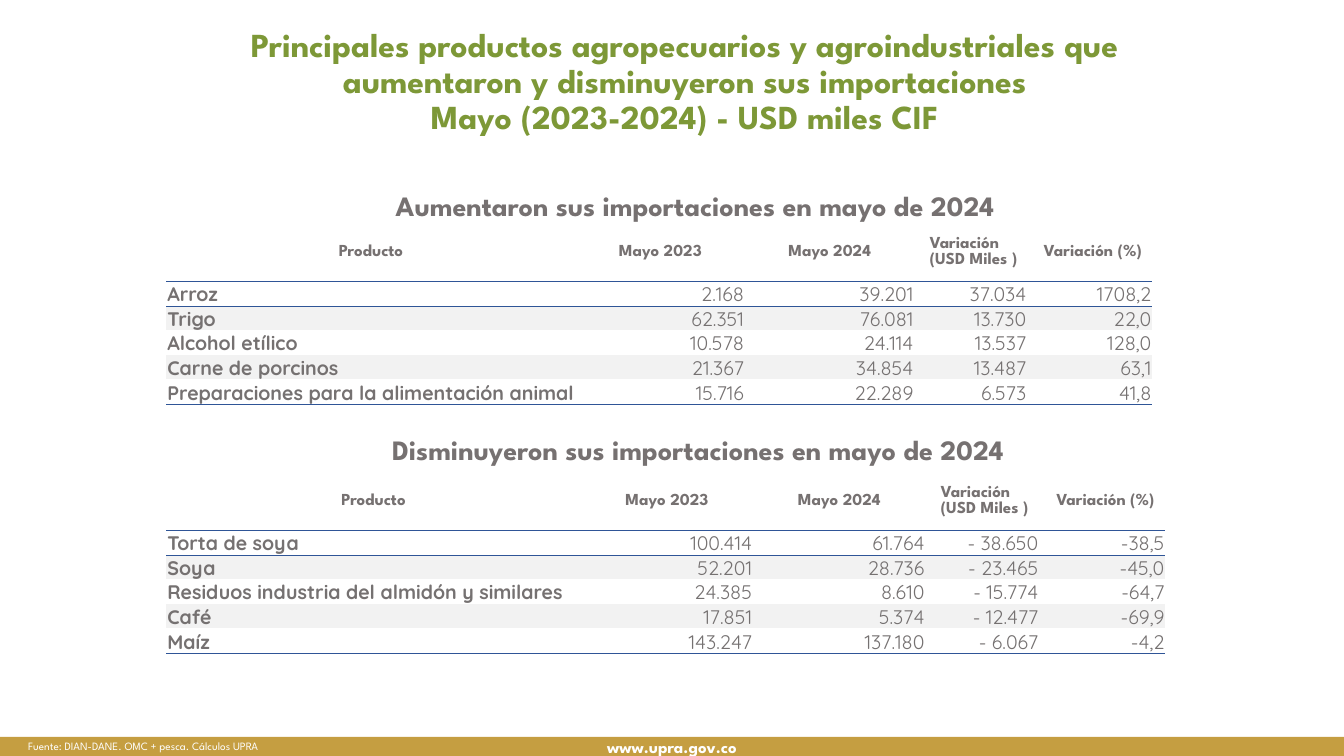
from lxml.etree import SubElement
from pptx import Presentation
from pptx.dml.color import RGBColor
from pptx.enum.shapes import MSO_SHAPE
from pptx.enum.text import MSO_ANCHOR, PP_ALIGN
from pptx.oxml.ns import qn
from pptx.util import Pt

PX = 9144  # 100 px to the inch
HEADING_FONT, BODY_FONT = "League Spartan", "Quicksand"
GREEN, GRAY, BODY_GRAY = "7D9837", "767171", "757171"
GOLD, BAND, RULE, WHITE = "C59E41", "F2F2F2", "2F5597", "FFFFFF"
NO_STYLE_NO_GRID = "{2D5ABB26-0587-4C30-8999-92F81FD0307C}"


def color(value):
    return RGBColor.from_string(value)


def write(frame, text, size, ink, align, bold=True, name=HEADING_FONT):
    """Fill a text frame with one paragraph in one font."""
    frame.word_wrap = True
    para = frame.paragraphs[0]
    para.text = text
    para.alignment = align
    para.font.size = Pt(size)
    para.font.name = name
    para.font.bold = bold
    para.font.color.rgb = color(ink)
    return para


deck = Presentation()
deck.slide_width, deck.slide_height = 1333 * PX, 750 * PX
page = deck.slides.add_slide(deck.slide_layouts[5])

title = page.shapes.title
title.left, title.top, title.width, title.height = 199 * PX, 23 * PX, 960 * PX, 107 * PX
title.text_frame.vertical_anchor = MSO_ANCHOR.TOP
heading = write(
    title.text_frame,
    "Principales productos agropecuarios y agroindustriales que "
    "aumentaron y disminuyeron sus importaciones\vMayo (2023-2024) - USD miles CIF",
    24, GREEN, PP_ALIGN.CENTER)
heading.line_spacing = 0.9

footer = page.shapes.add_shape(MSO_SHAPE.RECTANGLE, 0, 731 * PX, 1333 * PX, 19 * PX)
footer.shadow.inherit = False
footer.fill.solid()
footer.fill.fore_color.rgb = color(GOLD)
footer.line.fill.background()
footer.text_frame.vertical_anchor = MSO_ANCHOR.MIDDLE
write(footer.text_frame, "www.upra.gov.co", 12, WHITE, PP_ALIGN.CENTER)

# text, left, top, width, height, size, ink, alignment, bold
labels = [
    ("Fuente: DIAN-DANE. OMC + pesca. Cálculos UPRA",
     18, 729, 1291, 24, 8, WHITE, PP_ALIGN.JUSTIFY, False),
    ("Aumentaron sus importaciones en mayo de 2024",
     214, 182, 951, 44, 20, GRAY, PP_ALIGN.CENTER, True),
    ("Disminuyeron sus importaciones en mayo de 2024",
     178, 424, 1029, 44, 20, GRAY, PP_ALIGN.CENTER, True),
]
for text, left, top, width, height, size, ink, align, bold in labels:
    box = page.shapes.add_textbox(left * PX, top * PX, width * PX, height * PX)
    write(box.text_frame, text, size, ink, align, bold)

header = ("Producto", "Mayo 2023", "Mayo 2024", "Variación (USD Miles )", "Variación (%)")
increases = [
    header,
    ("Arroz", "2.168", "39.201", "37.034", "1708,2"),
    ("Trigo", "62.351", "76.081", "13.730", "22,0"),
    ("Alcohol etílico", "10.578", "24.114", "13.537", "128,0"),
    ("Carne de porcinos", "21.367", "34.854", "13.487", "63,1"),
    ("Preparaciones para la alimentación animal", "15.716", "22.289", "6.573", "41,8"),
]
decreases = [
    header,
    ("Torta de soya", "100.414", "61.764", "- 38.650", "-38,5"),
    ("Soya", "52.201", "28.736", "- 23.465", "-45,0"),
    ("Residuos industria del almidón y similares", "24.385", "8.610", "- 15.774", "-64,7"),
    ("Café", "17.851", "5.374", "- 12.477", "-69,9"),
    ("Maíz", "143.247", "137.180", "- 6.067", "-4,2"),
]
HEADER_HEIGHT, ROW_HEIGHT = 58, 20
CHANGE_COLUMN = 3
rules = {0: "a:lnB", 1: "a:lnT", len(header): "a:lnB"}

for rows, top, widths in [
    (increases, 221, (406, 168, 168, 118, 118)),
    (decreases, 468, (411, 171, 171, 119, 119)),
]:
    height = HEADER_HEIGHT + ROW_HEIGHT * (len(rows) - 1)
    table = page.shapes.add_table(
        len(rows), len(header), 165 * PX, top * PX, sum(widths) * PX, height * PX).table
    table.first_row = table.horz_banding = False
    table._tbl.tblPr.find(qn("a:tableStyleId")).text = NO_STYLE_NO_GRID
    for column, width in zip(table.columns, widths):
        column.width = width * PX
    for r, values in enumerate(rows):
        table.rows[r].height = (ROW_HEIGHT if r else HEADER_HEIGHT) * PX
        for c, value in enumerate(values):
            cell = table.cell(r, c)
            cell.margin_left = cell.margin_right = cell.margin_top = PX
            cell.margin_bottom = 0
            cell.vertical_anchor = MSO_ANCHOR.BOTTOM if r and c == 0 else MSO_ANCHOR.MIDDLE
            if r == 0:
                align = PP_ALIGN.LEFT if c == CHANGE_COLUMN else PP_ALIGN.CENTER
                write(cell.text_frame, value, 12, GRAY, align)
            else:
                align = PP_ALIGN.RIGHT if c else PP_ALIGN.LEFT
                write(cell.text_frame, value, 14, BODY_GRAY, align, c == 0, BODY_FONT)
            if c == CHANGE_COLUMN:
                if r == 0:
                    cell.margin_left = 15 * PX
                else:
                    cell.margin_right = 7 * PX
            if r in rules:
                line = SubElement(cell._tc.get_or_add_tcPr(), qn(rules[r]), w=str(Pt(0.25)))
                SubElement(SubElement(line, qn("a:solidFill")), qn("a:srgbClr"), val=RULE)
            if r and r % 2 == 0:
                cell.fill.solid()
                cell.fill.fore_color.rgb = color(BAND)
            else:
                cell.fill.background()

deck.save("out.pptx")
